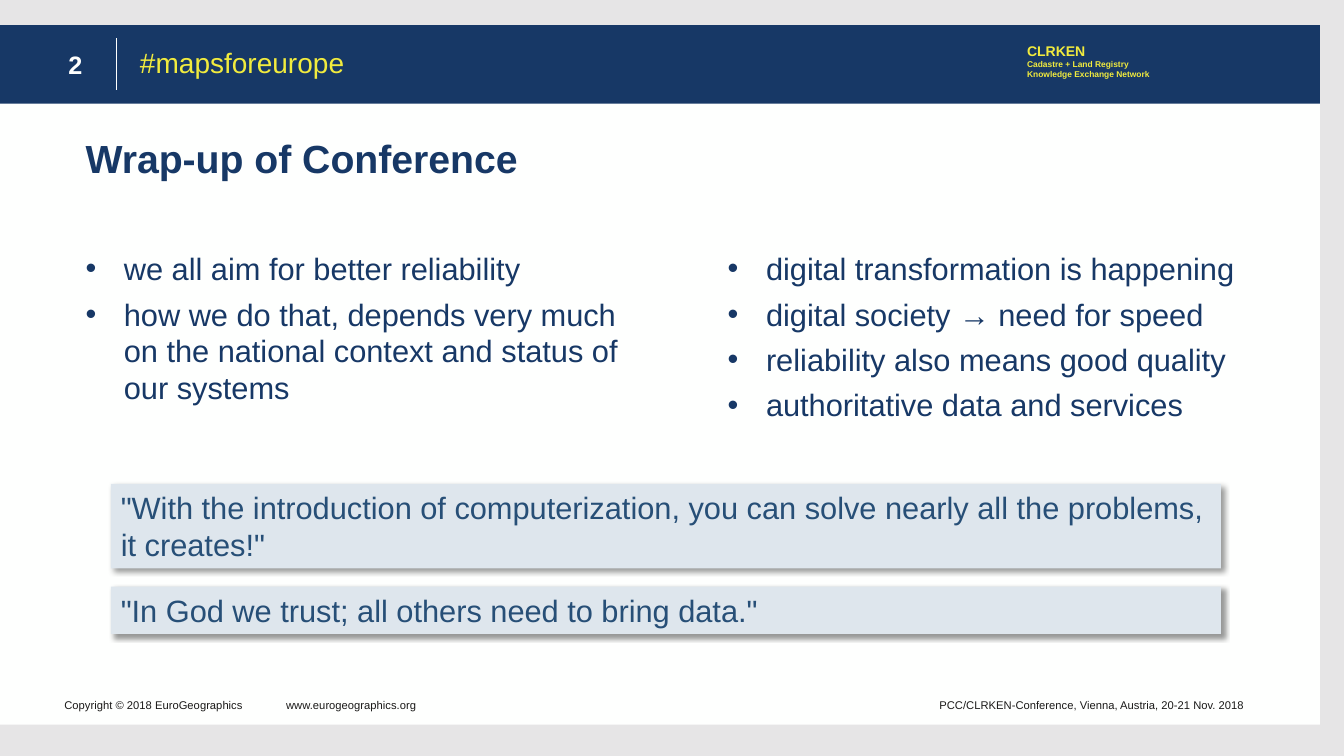
from dataclasses import dataclass
from lxml.etree import SubElement as Sub
from pptx import Presentation
from pptx.dml.color import RGBColor as RGB
from pptx.enum.shapes import MSO_CONNECTOR as Conn, MSO_SHAPE as Form
from pptx.enum.text import MSO_ANCHOR as Anchor, PP_ALIGN as Align
from pptx.oxml.ns import qn
from pptx.util import Inches, Pt


@dataclass(frozen=True)
class Theme:
    font: str = "Arial"
    back: str = "E6E5E6"
    white: str = "FEFFFE"
    navy: str = "173866"
    gold: str = "F1EB3E"
    ink: str = "1A1918"
    pale: str = "DEE6ED"
    steel: str = "274F77"
    title: int = 28
    body: int = 22
    tag: int = 20
    page: int = 18
    name: int = 10
    foot: int = 8
    small: int = 6


class Deck:
    """Draws on one slide; lengths are percent of its width and height."""

    def __init__(self, theme):
        self.theme = theme
        self.show = Presentation()
        self.show.slide_width = Inches(13.33)
        self.show.slide_height = Inches(7.5)
        self.slide = self.show.slides.add_slide(self.show.slide_layouts[6])
        fill = self.slide.background.fill
        fill.solid()
        fill.fore_color.rgb = RGB.from_string(theme.back)

    def place(self, x, y, *size):
        wide, high = self.show.slide_width, self.show.slide_height
        spans = (wide, high, wide, high)
        return [int(span * part / 100) for span, part in zip(spans, (x, y, *size))]

    def rect(self, box, color):
        shape = self.slide.shapes.add_shape(Form.RECTANGLE, *self.place(*box))
        shape.shadow.inherit = False
        shape.fill.solid()
        shape.fill.fore_color.rgb = RGB.from_string(color)
        shape.line.fill.background()
        return shape

    def rule(self, x, top, end, color):
        line = self.slide.shapes.add_connector(
            Conn.STRAIGHT, *self.place(x, top), *self.place(x, end))
        line.line.color.rgb = RGB.from_string(color)
        line.line.width = Pt(0.5)
        Sub(line._element.spPr, qn("a:effectLst"))

    def words(self, shape, lines, color, bold=False, anchor=Anchor.TOP, align=Align.LEFT):
        """Fill a shape with (text, size) lines and return its paragraphs."""
        frame = shape.text_frame
        frame.word_wrap = True
        frame.vertical_anchor = anchor
        for i, (text, size) in enumerate(lines):
            para = frame.add_paragraph() if i else frame.paragraphs[0]
            para.alignment = align
            run = para.add_run()
            run.text = text
            font = run.font
            font.name, font.size, font.bold = self.theme.font, Pt(size), bold
            font.color.rgb = RGB.from_string(color)
        return frame.paragraphs

    def text(self, box, lines, color, **style):
        shape = self.slide.shapes.add_textbox(*self.place(*box))
        return self.words(shape, lines, color, **style)

    def bullets(self, box, items):
        lines = [(item, self.theme.body) for item in items]
        for i, para in enumerate(self.text(box, lines, self.theme.navy)):
            props = para._p.get_or_add_pPr()
            props.set("marL", str(Inches(0.38)))
            props.set("indent", str(-Inches(0.38)))
            Sub(props, qn("a:buFont"), typeface=self.theme.font)
            Sub(props, qn("a:buChar"), char="•")
            para.space_before = Pt(3 if i else 0)
            para.space_after = Pt(3)

    def quote(self, box, saying):
        shape = self.rect(box, self.theme.pale)
        glow = Sub(shape._element.spPr.find(qn("a:effectLst")), qn("a:outerShdw"),
                   blurRad=str(Pt(4)), dist=str(Pt(3)), dir="2700000",
                   algn="tl", rotWithShape="0")
        tone = Sub(glow, qn("a:srgbClr"), val="000000")
        Sub(tone, qn("a:alpha"), val="40000")
        self.words(shape, [(saying, self.theme.body)], self.theme.steel)


def main():
    look = Theme()
    deck = Deck(look)
    mid = Anchor.MIDDLE

    deck.rect((0, 3.33, 98.2, 92.53), look.white)
    deck.rect((0, 3.33, 98.2, 10.4), look.navy)
    deck.text((75.69, 4.93, 10.65, 6.27),
              [("CLRKEN", look.name),
               ("Cadastre + Land Registry", look.small),
               ("Knowledge Exchange Network", look.small)],
              look.gold, bold=True)
    deck.rule(8.63, 5.07, 11.87, look.white)
    deck.text((4.35, 5.87, 3.98, 5.33), [("2", look.page)], look.white,
              bold=True, anchor=mid)
    tag = deck.text((9.68, 5.87, 31.13, 5.6),
                    [("#mapsforeurope", look.tag)], look.gold)
    title = deck.text((5.63, 16.53, 87.17, 9.47),
                      [("Wrap-up of Conference", look.title)], look.navy,
                      bold=True, anchor=mid)
    for para in (*tag, *title):
        para.line_spacing = 0.9

    deck.bullets((5.63, 32.4, 43.96, 22.27), [
        "we all aim for better reliability",
        "how we do that, depends very much on the national context "
        "and status of our systems"])
    deck.bullets((53.41, 32.4, 43.96, 24.4), [
        "digital transformation is happening",
        "digital society → need for speed",
        "reliability also means good quality",
        "authoritative data and services"])

    top, gap = 64, 2.4
    for high, saying in (
            (11.2, '"With the introduction of computerization, you can solve '
                   'nearly all the problems, it creates!"'),
            (6.27, '"In God we trust; all others need to bring data."')):
        deck.quote((8.25, top, 82.6, high), saying)
        top += high + gap

    foot = (90.53, 33.76, 5.33)
    left = deck.text((4.05, *foot),
                     [("Copyright © 2018 EuroGeographics\twww.eurogeographics.org",
                       look.foot)], look.ink, anchor=mid)
    tabs = Sub(left[0]._p.get_or_add_pPr(), qn("a:tabLst"))
    Sub(tabs, qn("a:tab"), pos=str(Inches(2.2)), algn="l")
    deck.text((59.56, *foot),
              [("PCC/CLRKEN-Conference, Vienna, Austria, 20-21 Nov. 2018", look.foot)],
              look.ink, anchor=mid, align=Align.RIGHT)

    deck.show.save("out.pptx")


if __name__ == "__main__":
    main()
